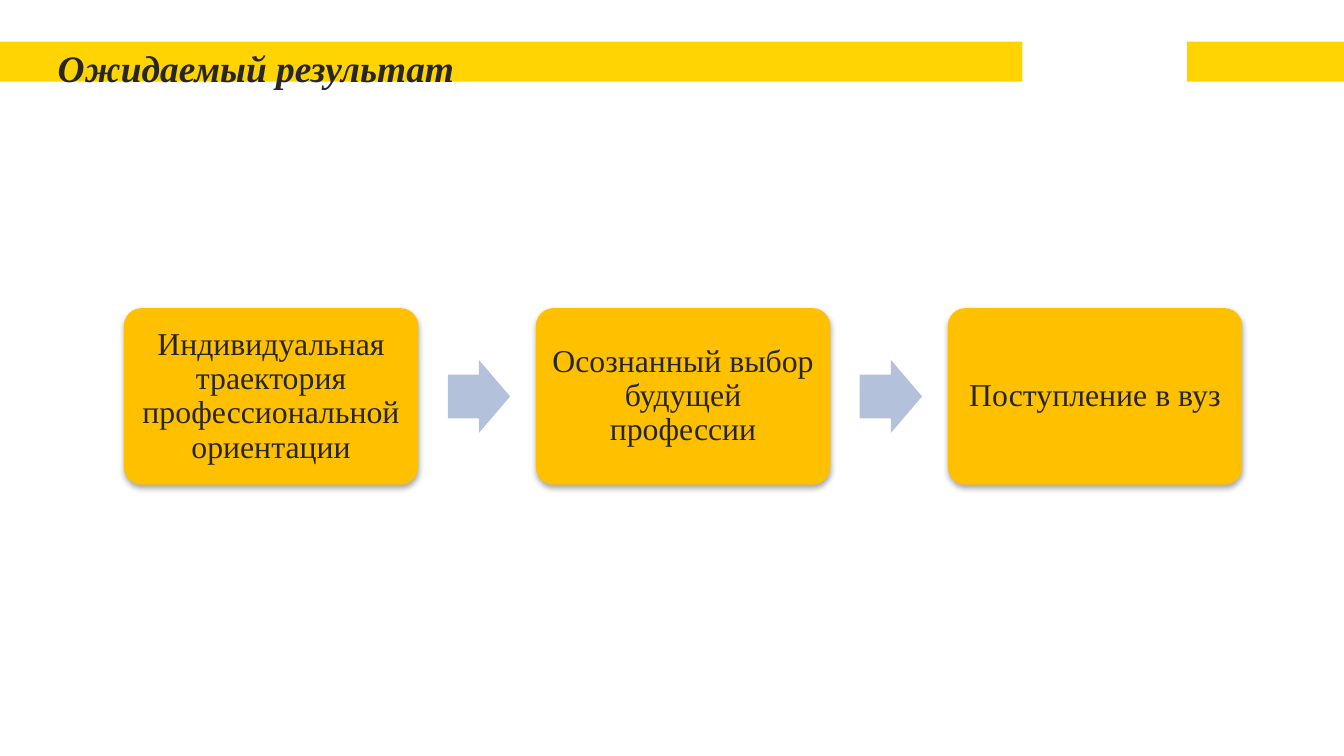
from dataclasses import dataclass

from lxml.etree import SubElement
from pptx import Presentation
from pptx.dml.color import RGBColor
from pptx.enum.shapes import MSO_SHAPE as Shape
from pptx.enum.text import MSO_ANCHOR as Anchor, MSO_AUTO_SIZE as AutoSize, PP_ALIGN as Align
from pptx.oxml.ns import qn
from pptx.util import Pt


@dataclass(frozen=True)
class Theme:
    font: str = "Times New Roman"
    ink: str = "262626"
    bar: str = "FFD400"
    card: str = "FFC000"
    arrow: str = "B3C1DB"
    shadow: str = "000000"
    title_size: float = 20
    card_size: float = 17


@dataclass(frozen=True)
class Frame:
    left: float
    top: float
    width: float
    height: float


THEME = Theme()
BARS = [Frame(0, 22.3, 547.7, 21.5), Frame(635.8, 22.3, 84.2, 21.5)]
TITLE = Frame(-2.2, 22.3, 278.6, 25.2)
STEPS = [
    "Индивидуальная траектория профессиональной ориентации",
    "Осознанный выбор будущей профессии",
    "Поступление в вуз",
]
FIRST_LEFT, CENTER_Y, PITCH = 66.4, 212.4, 220.7
CARD_WIDTH, CARD_HEIGHT = 157.7, 94.6
ARROW_WIDTH, ARROW_HEIGHT, ARROW_GAP = 33.4, 39.1, 15.8


def place(item, frame: Frame) -> None:
    item.left, item.top = Pt(frame.left), Pt(frame.top)
    item.width, item.height = Pt(frame.width), Pt(frame.height)


def add_block(page, kind, frame: Frame, color: str, adjustments=()):
    block = page.shapes.add_shape(kind, 0, 0, 0, 0)
    place(block, frame)
    block.shadow.inherit = False
    block.fill.solid()
    block.fill.fore_color.rgb = RGBColor.from_string(color)
    block.line.fill.background()
    for index, value in enumerate(adjustments):
        block.adjustments[index] = value
    return block


def add_shadow(block) -> None:
    effects = block._element.spPr.find(qn("a:effectLst"))
    shadow = SubElement(effects, qn("a:outerShdw"), blurRad=str(Pt(3.1)),
                        dist=str(Pt(1.8)), dir="5400000", rotWithShape="0")
    color = SubElement(shadow, qn("a:srgbClr"), val=THEME.shadow)
    SubElement(color, qn("a:alpha"), val="35000")


def write(box, text: str, size: float, anchor, insets, emphasis: bool = False):
    frame = box.text_frame
    frame.word_wrap = True
    frame.vertical_anchor = anchor
    (frame.margin_left, frame.margin_top,
     frame.margin_right, frame.margin_bottom) = map(Pt, insets)
    frame.text = text
    para = frame.paragraphs[0]
    para.alignment = Align.CENTER
    para.space_before = Pt(0)
    para.font.name = THEME.font
    para.font.size = Pt(size)
    para.font.bold = para.font.italic = emphasis
    para.font.color.rgb = RGBColor.from_string(THEME.ink)
    return para


def add_title(page, text: str) -> None:
    title = page.shapes.title
    place(title, TITLE)
    write(title, text, THEME.title_size, Anchor.TOP, (0, 2, 0, 0), emphasis=True)
    title.text_frame.auto_size = AutoSize.SHAPE_TO_FIT_TEXT
    page.shapes._spTree.append(title._element)


def add_step(page, left: float, text: str) -> None:
    frame = Frame(left, CENTER_Y - CARD_HEIGHT / 2, CARD_WIDTH, CARD_HEIGHT)
    card = add_block(page, Shape.ROUNDED_RECTANGLE, frame, THEME.card, (0.1,))
    add_shadow(card)
    para = write(card, text, THEME.card_size, Anchor.MIDDLE, (5, 5, 5, 5))
    para.line_spacing = 0.9


def add_arrow(page, left: float) -> None:
    frame = Frame(left, CENTER_Y - ARROW_HEIGHT / 2, ARROW_WIDTH, ARROW_HEIGHT)
    add_block(page, Shape.RIGHT_ARROW, frame, THEME.arrow, (0.6, 0.5))


def main() -> None:
    deck = Presentation()
    deck.slide_width, deck.slide_height = Pt(720), Pt(405)
    page = deck.slides.add_slide(deck.slide_layouts.get_by_name("Title Only"))
    for frame in BARS:
        add_block(page, Shape.RECTANGLE, frame, THEME.bar)
    add_title(page, "Ожидаемый результат")
    for index, text in enumerate(STEPS):
        left = FIRST_LEFT + index * PITCH
        if index:
            add_arrow(page, left - PITCH + CARD_WIDTH + ARROW_GAP)
        add_step(page, left, text)
    deck.save("out.pptx")


if __name__ == "__main__":
    main()
